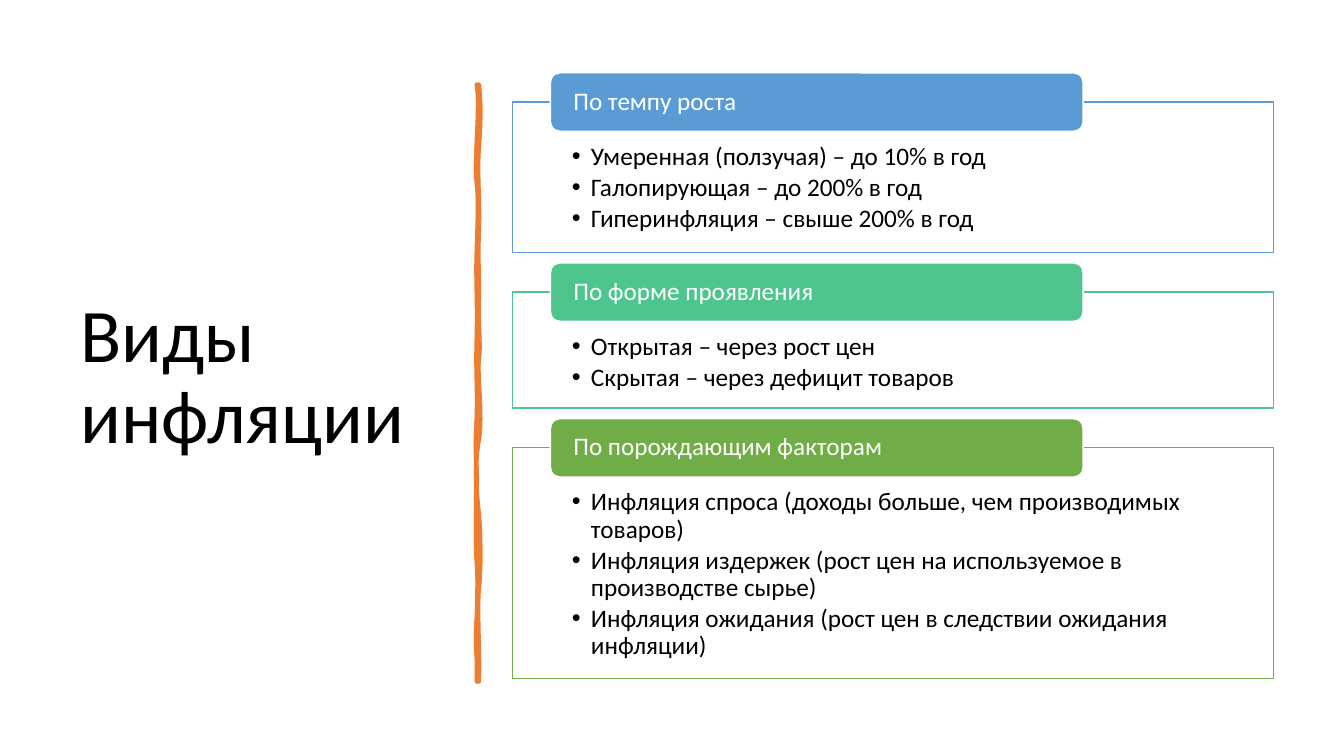
import copy
from dataclasses import dataclass

import lxml.etree
import pptx
import pptx.dml.color
import pptx.enum.shapes
import pptx.enum.text
import pptx.oxml.ns
import pptx.slide
import pptx.text.text
import pptx.util

SLIDE_W = pptx.util.Inches(13.333)
SLIDE_H = pptx.util.Inches(7.5)
BRUSH_CELL = SLIDE_H / 750


@dataclass(frozen=True)
class Theme:
    font: str = "Calibri"
    title_size: float = 54
    body_size: float = 18
    line_spacing: float = 0.9
    item_gap: float = 2.7
    border: float = 1
    brush_width: float = 3.25
    panel_opacity: int = 90
    dark: str = "000000"
    light: str = "FFFFFF"
    brush: str = "ED7D31"
    blue: str = "5B9BD5"
    teal: str = "4DC58D"
    green: str = "70AD47"


@dataclass(frozen=True)
class Box:
    """An area in percent of the slide's width and height."""
    left: float
    top: float
    width: float
    height: float

    def emu(self) -> tuple[int, int, int, int]:
        return (round(SLIDE_W * self.left / 100), round(SLIDE_H * self.top / 100),
                round(SLIDE_W * self.width / 100), round(SLIDE_H * self.height / 100))

    def inset(self, dx: float, dy: float) -> "Box":
        return Box(self.left + dx, self.top + dy, self.width - 2 * dx, self.height - 2 * dy)


@dataclass(frozen=True)
class Category:
    heading: str
    color: str
    height: float
    kinds: tuple[str, ...]


THEME = Theme()
TITLE_AREA = Box(5.23, 9.33, 28.05, 81.47)
PANEL_LEFT, PANEL_TOP, PANEL_WIDTH, PANEL_GAP = 38.12, 13.5, 56.63, 5.27
HEADING_HEIGHT = 7.73

CATEGORIES = (
    Category("По темпу роста", THEME.blue, 19.87, (
        "Умеренная (ползучая) – до 10% в год",
        "Галопирующая – до 200% в год",
        "Гиперинфляция – свыше 200% в год")),
    Category("По форме проявления", THEME.teal, 15.33, (
        "Открытая – через рост цен",
        "Скрытая – через дефицит товаров")),
    Category("По порождающим факторам", THEME.green, 30.53, (
        "Инфляция спроса (доходы больше, чем производимых товаров)",
        "Инфляция издержек (рост цен на используемое в производстве сырье)",
        "Инфляция ожидания (рост цен в следствии ожидания инфляции)")),
)

# Start point, then two control points and an end point per curve, in brush cells.
Points = tuple[tuple[int, int], ...]
BRUSH_RIGHT, BRUSH_TOP, BRUSH_LENGTH, BRUSH_THICKNESS = 475, 84, 592, 2
BRUSH_EDGE: Points = (
    (475, 84), (477, 102), (477, 119), (475, 146), (473, 173), (476, 195), (475, 226),
    (474, 257), (475, 262), (475, 294), (474, 325), (477, 342), (475, 356),
    (473, 370), (479, 414), (475, 436), (471, 457), (472, 484), (475, 510),
    (477, 536), (477, 564), (475, 584), (473, 603), (476, 650), (475, 676),
    (474, 676), (473, 676), (473, 676), (474, 646), (471, 644), (473, 613),
    (474, 583), (474, 570), (473, 557), (472, 544), (472, 495), (473, 477),
    (473, 459), (471, 445), (473, 415), (474, 386), (472, 373), (473, 335),
    (474, 298), (472, 281), (473, 250), (474, 218), (475, 200), (473, 181),
    (470, 163), (477, 104), (473, 84), (474, 84), (474, 84), (475, 84))
BRUSH_BODY: Points = (
    (475, 84), (475, 115), (472, 125), (475, 152), (477, 179), (474, 197), (475, 208),
    (476, 220), (474, 255), (475, 294), (476, 333), (473, 343), (475, 362),
    (477, 381), (477, 397), (475, 430), (472, 463), (475, 474), (475, 516),
    (475, 557), (474, 553), (475, 578), (476, 603), (474, 647), (475, 676),
    (474, 675), (473, 675), (473, 676), (470, 649), (474, 632), (473, 613),
    (472, 595), (475, 569), (473, 539), (471, 510), (476, 500), (473, 471),
    (470, 442), (477, 420), (473, 386), (469, 351), (474, 325), (473, 300),
    (471, 275), (471, 259), (473, 238), (474, 216), (474, 185), (473, 164),
    (471, 143), (475, 121), (473, 84), (474, 84), (474, 84), (475, 84))


def rgb(color: str) -> pptx.dml.color.RGBColor:
    return pptx.dml.color.RGBColor.from_string(color)


def add_node(parent: lxml.etree._Element, tag: str, **attributes: str) -> lxml.etree._Element:
    node = lxml.etree.SubElement(parent, pptx.oxml.ns.qn(tag))
    node.attrib.update(attributes)
    return node


def write(paragraph: pptx.text.text._Paragraph, text: str, size: float, color: str) -> None:
    paragraph.alignment = pptx.enum.text.PP_ALIGN.LEFT
    paragraph.line_spacing = THEME.line_spacing
    run = paragraph.add_run()
    run.text = text
    run.font.name = THEME.font
    run.font.size = pptx.util.Pt(size)
    run.font.color.rgb = rgb(color)


def add_bullet(paragraph: pptx.text.text._Paragraph) -> None:
    indent = pptx.util.Inches(0.19)
    properties = paragraph._p.get_or_add_pPr()
    properties.set("marL", str(indent))
    properties.set("indent", str(-indent))
    add_node(properties, "a:buFont", typeface="Arial")
    add_node(properties, "a:buChar", char="•")


def add_block(slide: pptx.slide.Slide, preset: pptx.enum.shapes.MSO_SHAPE, area: Box,
              fill: str, border: str, opacity: int = 100) -> None:
    block = slide.shapes.add_shape(preset, *area.emu())
    block.shadow.inherit = False
    block.fill.solid()
    block.fill.fore_color.rgb = rgb(fill)
    if opacity < 100:
        color = block._element.spPr.find(".//" + pptx.oxml.ns.qn("a:srgbClr"))
        add_node(color, "a:alpha", val=str(opacity * 1000))
    block.line.color.rgb = rgb(border)
    block.line.width = pptx.util.Pt(THEME.border)


def add_text_area(slide: pptx.slide.Slide, area: Box,
                  insets: tuple[float, float, float, float],
                  anchor: pptx.enum.text.MSO_ANCHOR) -> pptx.text.text.TextFrame:
    """Add a wrapped text box; insets are left, top, right, bottom in inches."""
    frame = slide.shapes.add_textbox(*area.emu()).text_frame
    frame.word_wrap = True
    frame.vertical_anchor = anchor
    (frame.margin_left, frame.margin_top, frame.margin_right,
     frame.margin_bottom) = map(pptx.util.Inches, insets)
    return frame


def add_category(slide: pptx.slide.Slide, category: Category, top: float) -> None:
    shapes, anchors = pptx.enum.shapes.MSO_SHAPE, pptx.enum.text.MSO_ANCHOR
    panel = Box(PANEL_LEFT, top, PANEL_WIDTH, category.height)
    add_block(slide, shapes.RECTANGLE, panel, THEME.light, category.color, THEME.panel_opacity)
    kinds = add_text_area(slide, panel, (0.59, 0.41, 0.59, 0.14), anchors.TOP)
    for index, kind in enumerate(category.kinds):
        paragraph = kinds.add_paragraph() if index else kinds.paragraphs[0]
        paragraph.level = 1
        write(paragraph, kind, THEME.body_size, THEME.dark)
        paragraph.space_after = pptx.util.Pt(THEME.item_gap)
        add_bullet(paragraph)

    tab = Box(PANEL_LEFT + 0.05 * PANEL_WIDTH, top - HEADING_HEIGHT / 2,
              0.7 * PANEL_WIDTH, HEADING_HEIGHT)
    add_block(slide, shapes.ROUNDED_RECTANGLE, tab, category.color, THEME.light)
    heading = add_text_area(slide, tab.inset(0.21, 0.38), (0.2, 0, 0.2, 0), anchors.MIDDLE)
    write(heading.paragraphs[0], category.heading, THEME.body_size, THEME.light)


def add_brush_stroke(slide: pptx.slide.Slide) -> None:
    """Draw a lengthwise outline turned upright: curved edge line plus curved body."""
    edge, body = ([(y - BRUSH_TOP, BRUSH_RIGHT - x) for x, y in points]
                  for points in (BRUSH_EDGE, BRUSH_BODY))
    builder = slide.shapes.build_freeform(*edge[0], scale=BRUSH_CELL)
    builder.add_line_segments(edge[1:], close=True)
    stroke = builder.convert_to_shape()
    stroke.shadow.inherit = False
    stroke.width = round(BRUSH_LENGTH * BRUSH_CELL)
    stroke.height = round(BRUSH_THICKNESS * BRUSH_CELL)
    stroke.left = round((BRUSH_RIGHT - (BRUSH_THICKNESS + BRUSH_LENGTH) / 2) * BRUSH_CELL)
    stroke.top = round((BRUSH_TOP + (BRUSH_LENGTH - BRUSH_THICKNESS) / 2) * BRUSH_CELL)
    stroke.rotation = 90
    stroke.fill.solid()
    stroke.fill.fore_color.rgb = rgb(THEME.brush)
    stroke.line.color.rgb = rgb(THEME.brush)
    stroke.line.width = pptx.util.Pt(THEME.brush_width)
    add_node(stroke.line._get_or_add_ln(), "a:round")

    outlines = stroke._element.spPr.find(".//" + pptx.oxml.ns.qn("a:pathLst"))
    outlines.clear()
    for points, hidden in ((edge, {"fill": "none"}), (body, {"stroke": "0"})):
        outline = add_node(outlines, "a:path", w=str(BRUSH_LENGTH), h=str(BRUSH_THICKNESS), **hidden)
        curves = [points[:1]] + [points[i:i + 3] for i in range(1, len(points), 3)]
        for curve in curves:
            command = add_node(outline, "a:moveTo" if len(curve) == 1 else "a:cubicBezTo")
            for x, y in curve:
                add_node(command, "a:pt", x=str(x), y=str(y))
        add_node(outline, "a:close")


def add_title(slide: pptx.slide.Slide, text: str) -> None:
    title = slide.shapes.title
    title.left, title.top, title.width, title.height = TITLE_AREA.emu()
    frame = title.text_frame
    frame.word_wrap = True
    frame.auto_size = pptx.enum.text.MSO_AUTO_SIZE.NONE
    frame.vertical_anchor = pptx.enum.text.MSO_ANCHOR.MIDDLE
    write(frame.paragraphs[0], text, THEME.title_size, THEME.dark)


deck = pptx.Presentation()
deck.slide_width, deck.slide_height = SLIDE_W, SLIDE_H
inflation = deck.slides.add_slide(deck.slide_layouts[5])
add_title(inflation, "Виды инфляции")
add_brush_stroke(inflation)
panel_top = PANEL_TOP
for inflation_category in CATEGORIES:
    add_category(inflation, inflation_category, panel_top)
    panel_top += inflation_category.height + PANEL_GAP
deck.save("out.pptx")
